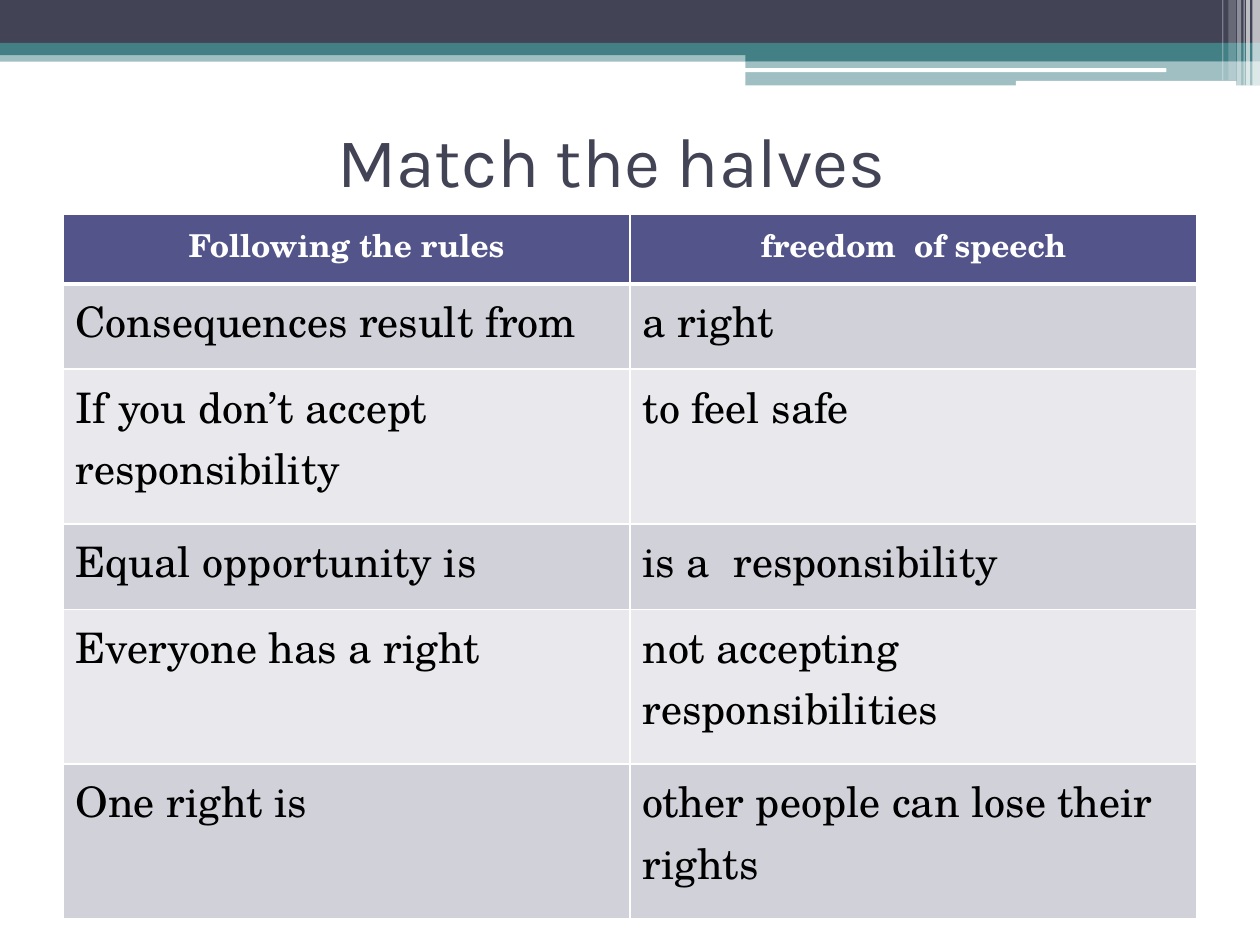
import lxml.etree
import pptx
import pptx.dml.color
import pptx.enum.shapes
import pptx.enum.text
import pptx.oxml.ns
import pptx.util

Pt = pptx.util.Pt
qn = pptx.oxml.ns.qn
SHAPES = pptx.enum.shapes.MSO_SHAPE
MIDDLE = pptx.enum.text.MSO_ANCHOR.MIDDLE
CENTER = pptx.enum.text.PP_ALIGN.CENTER
LEFT = pptx.enum.text.PP_ALIGN.LEFT


def color(hex_code):
    return pptx.dml.color.RGBColor.from_string(hex_code)


class SlideBuilder:
    navy = "424456"
    teal = "438086"
    white = "FFFFFF"
    black = "000000"
    header_fill = "53548A"
    band_fills = ("D1D1DA", "E9E9ED")
    title_font = "Karla"
    body_font = "TeX Gyre Schola"

    def __init__(self, slide):
        self.slide = slide

    def bar(self, left, top, width, height, fill, opacity=100, rounded=False):
        kind = SHAPES.ROUNDED_RECTANGLE if rounded else SHAPES.RECTANGLE
        bar = self.slide.shapes.add_shape(
            kind, Pt(left), Pt(top), Pt(width), Pt(height))
        bar.shadow.inherit = False
        bar.line.fill.background()
        bar.fill.solid()
        bar.fill.fore_color.rgb = color(fill)
        if opacity < 100:
            srgb = bar._element.spPr.find(".//" + qn("a:srgbClr"))
            lxml.etree.SubElement(srgb, qn("a:alpha"), val=str(opacity * 1000))

    def add_text(self, paragraph, text, size, font, hex_code, align,
                 bold=False):
        paragraph.alignment = align
        run = paragraph.add_run()
        run.text = text
        run.font.size = Pt(size)
        run.font.name = font
        run.font.bold = bold
        run.font.color.rgb = color(hex_code)

    def title(self, text, left, top, width, height):
        title = self.slide.shapes.title
        title.left, title.top = Pt(left), Pt(top)
        title.width, title.height = Pt(width), Pt(height)
        title.text_frame.vertical_anchor = MIDDLE
        self.add_text(title.text_frame.paragraphs[0], text, 40,
                      self.title_font, self.navy, CENTER)

    def borders(self, cell, top=1, bottom=1):
        properties = cell._tc.get_or_add_tcPr()
        sides = (("L", 1), ("R", 1), ("T", top), ("B", bottom))
        for place, (side, width) in enumerate(sides):
            line = lxml.etree.Element(qn("a:ln" + side), w=str(int(Pt(width))))
            fill = lxml.etree.SubElement(line, qn("a:solidFill"))
            lxml.etree.SubElement(fill, qn("a:srgbClr"), val=self.white)
            properties.insert(place, line)

    def table(self, rows, left, top, column_width, row_heights):
        columns = len(rows[0])
        table = self.slide.shapes.add_table(
            len(rows), columns, Pt(left), Pt(top),
            Pt(column_width * columns), Pt(sum(row_heights))).table
        for column in table.columns:
            column.width = Pt(column_width)
        for index, (texts, height) in enumerate(zip(rows, row_heights)):
            table.rows[index].height = Pt(height)
            for cell, text in zip(table.rows[index].cells, texts):
                paragraph = cell.text_frame.paragraphs[0]
                cell.fill.solid()
                if index == 0:
                    cell.fill.fore_color.rgb = color(self.header_fill)
                    self.add_text(paragraph, text, 18, self.body_font,
                                  self.white, CENTER, bold=True)
                    self.borders(cell, bottom=3)
                else:
                    band = self.band_fills[(index - 1) % 2]
                    cell.fill.fore_color.rgb = color(band)
                    self.add_text(paragraph, text, 24, self.body_font,
                                  self.black, LEFT)
                    self.borders(cell, top=3 if index == 1 else 1)


def main():
    presentation = pptx.Presentation()
    presentation.slide_width, presentation.slide_height = Pt(720), Pt(540)
    builder = SlideBuilder(
        presentation.slides.add_slide(presentation.slide_layouts[5]))
    teal, white = builder.teal, builder.white

    builder.bar(0, 28.8, 720, 6.5, teal, 50)
    builder.bar(0, 0, 720, 24.5, builder.navy)
    builder.bar(0, 24.5, 720, 7, teal)
    builder.bar(426, 28, 294, 7, teal)
    builder.bar(426, 34.6, 294, 14.2, teal, 50)
    builder.bar(425.5, 39, 241, 2.2, white, rounded=True)
    builder.bar(580.5, 46.2, 126, 2.9, white, rounded=True)

    stripes = (
        (715.7, 4.3, 49, 65), (712.1, 2.2, 49, 65), (710.6, 0.7, 49, 60),
        (707, 2.2, 49, 40), (702, 4.3, 46, 20), (698.4, 0.7, 46, 30),
    )
    for left, width, height, opacity in stripes:
        builder.bar(left, 0, width, height, white, opacity)

    builder.title("Match the halves", 25.2, 49, 648, 84.2)

    halves = (
        ("Following the rules", "freedom  of speech"),
        ("Consequences result from", "a right"),
        ("If you don’t accept responsibility", "to feel safe"),
        ("Equal opportunity is", "is a  responsibility"),
        ("Everyone has a right", "not accepting  responsibilities"),
        ("One right is", "other people can lose their rights"),
    )
    header, single, double = 39.6, 48.8, 88.4
    builder.table(halves, 36, 122.6, 324,
                  (header, single, double, single, double, double))

    presentation.save("out.pptx")


if __name__ == "__main__":
    main()
